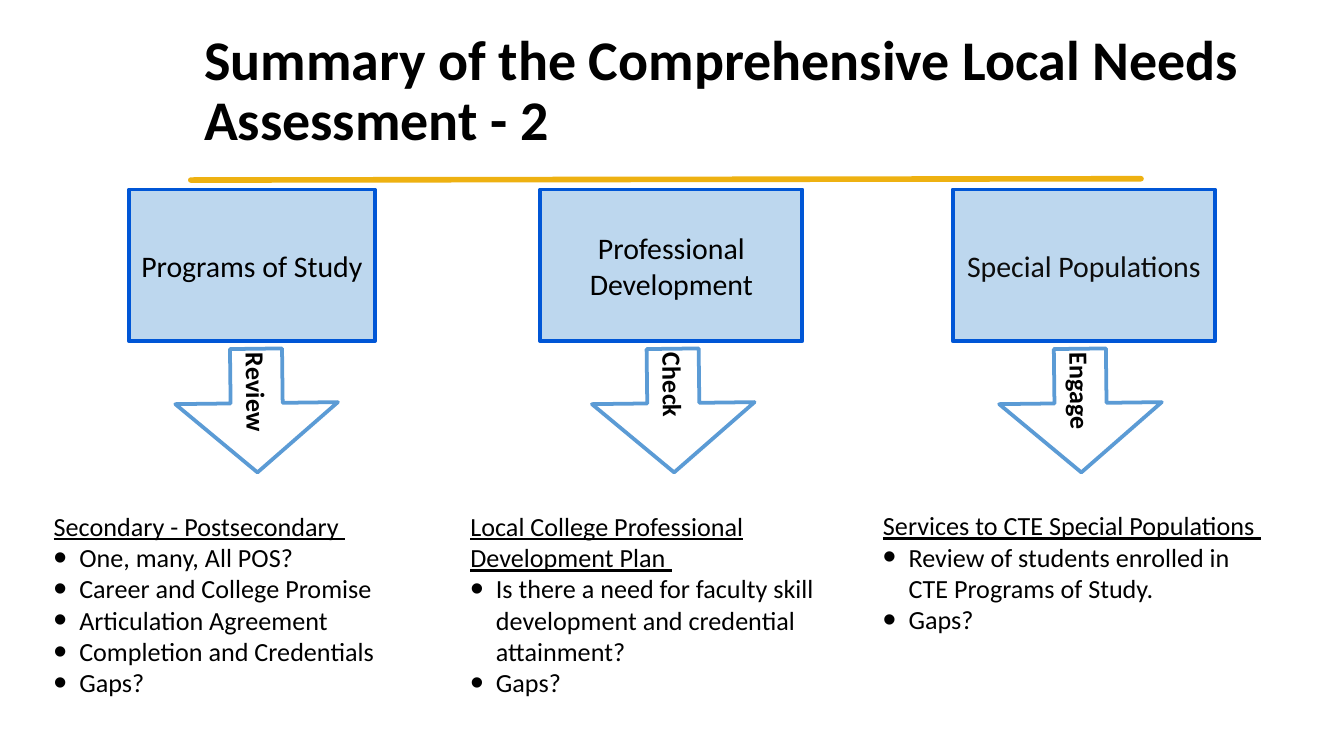
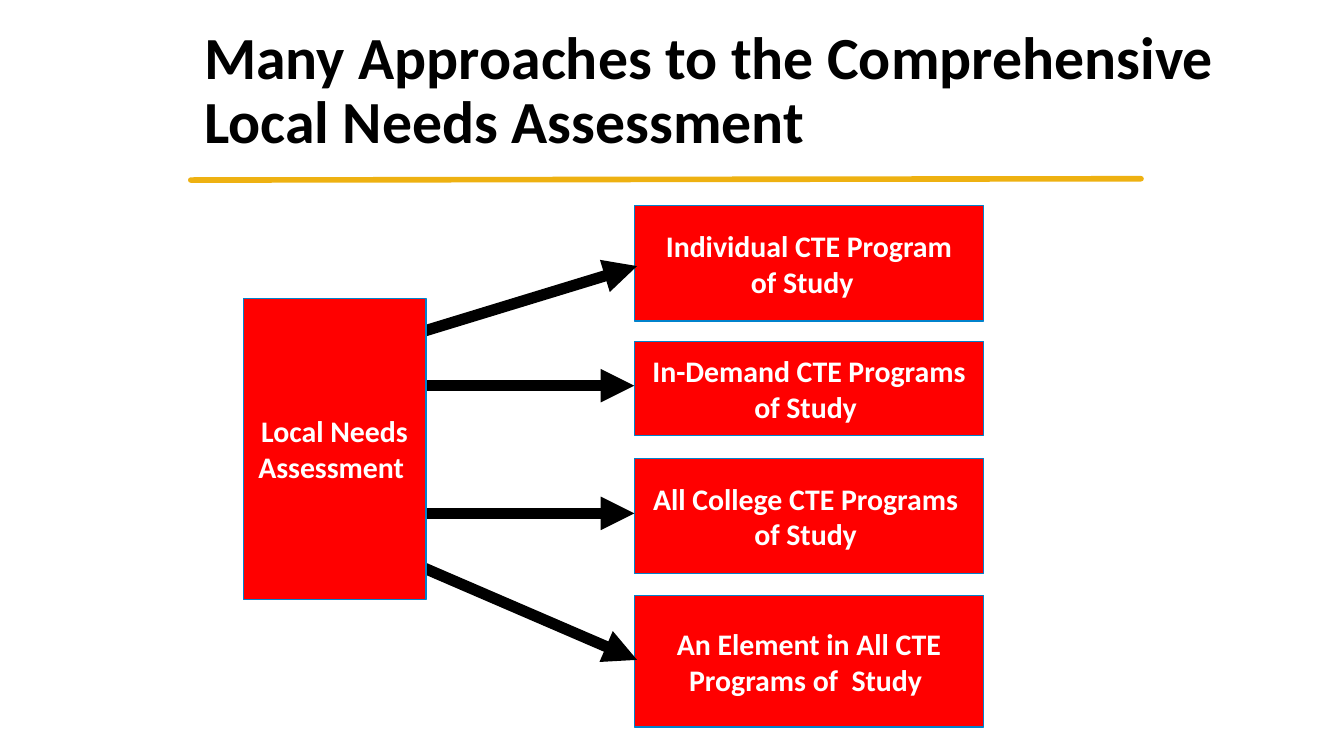
from lxml import etree
from pptx import Presentation
from pptx import util as u
from pptx.dml.color import RGBColor
from pptx.enum import shapes, text
from pptx.oxml.ns import qn

FONT = "Calibri"
BLACK, WHITE, GOLD = "000000", "FFFFFF", "EEB111"
PALE, BLUE, SKY = "BDD7EE", "0056D6", "5B9BD5"
RED, EDGE = "FF0000", "0082CC"
INSET = 0.03
MID = text.PP_ALIGN.CENTER
LEFT = text.PP_ALIGN.LEFT


def tint(hue):
    return RGBColor.from_string(hue)


def place(*nums):
    return [u.Inches(n) for n in nums]


def write(para, words, size, hue=BLACK, bold=False, under=False):
    for i, part in enumerate(words.split("\n")):
        if i:
            para.add_line_break()
        run = para.add_run()
        run.text = part
        font = run.font
        font.name, font.size = FONT, u.Pt(size)
        font.bold, font.underline = bold, under
        font.color.rgb = tint(hue)


def setup(frame, inset=INSET):
    frame.word_wrap = True
    frame.vertical_anchor = text.MSO_ANCHOR.MIDDLE
    if inset is not None:
        frame.margin_left = frame.margin_right = u.Inches(inset)
        frame.margin_top = frame.margin_bottom = u.Inches(inset)


def block(slide, kind, spot, fill, edge, width):
    shape = slide.shapes.add_shape(kind, *place(*spot))
    shape.shadow.inherit = False
    shape.fill.solid()
    shape.fill.fore_color.rgb = tint(fill)
    shape.line.color.rgb = tint(edge)
    shape.line.width = u.Pt(width)
    setup(shape.text_frame)
    return shape


def box(slide, spot, words, fill, edge, width, hue, bold=False):
    shape = block(slide, shapes.MSO_SHAPE.RECTANGLE, spot, fill, edge, width)
    para = shape.text_frame.paragraphs[0]
    para.alignment = MID
    write(para, words, 16, hue, bold)


def redbox(slide, spot, words):
    box(slide, spot, words, RED, EDGE, 0.75, WHITE, True)


def arrow(slide, left, word):
    shape = block(slide, shapes.MSO_SHAPE.RIGHT_ARROW,
                  (left, 2.45, 0.92, 1.21), WHITE, SKY, 2)
    shape.rotation = 89.3
    shape.adjustments[0] = 0.32
    shape.adjustments[1] = 0.56
    para = shape.text_frame.paragraphs[0]
    para.alignment = LEFT
    write(para, word, 14, bold=True)


def line(slide, ends, hue, width, head=False):
    link = slide.shapes.add_connector(shapes.MSO_CONNECTOR.STRAIGHT,
                                      *place(*ends))
    link.line.color.rgb = tint(hue)
    link.line.width = u.Pt(width)
    props = link._element.spPr
    etree.SubElement(props, qn("a:effectLst"))
    stroke = props.find(qn("a:ln"))
    if head:
        etree.SubElement(stroke, qn("a:tailEnd"), type="triangle")
    else:
        stroke.set("cap", "rnd")


def bullet(para):
    props = para._p.get_or_add_pPr()
    props.set("marL", str(u.Inches(0.19)))
    props.set("indent", str(u.Inches(-0.19)))
    etree.SubElement(props, qn("a:buSzPct"), val="145000")
    etree.SubElement(props, qn("a:buFont"), typeface="Arial")
    etree.SubElement(props, qn("a:buChar"), char="•")


def notes(slide, left, high, head, items):
    area = slide.shapes.add_textbox(*place(left, 3.76, 3.06, high))
    frame = area.text_frame
    setup(frame)
    frame.auto_size = text.MSO_AUTO_SIZE.SHAPE_TO_FIT_TEXT
    write(frame.paragraphs[0], head, 14, under=True)
    for item in items:
        para = frame.add_paragraph()
        bullet(para)
        write(para, item, 14)


def start(deck, title, size):
    slide = deck.slides.add_slide(deck.slide_layouts[6])
    line(slide, (1.42, 1.34, 8.49, 1.33), GOLD, 3)
    area = slide.shapes.add_textbox(*place(1.42, 0.14, 8.05, 1.09))
    setup(area.text_frame, None)
    para = area.text_frame.paragraphs[0]
    para.line_spacing = 0.9
    write(para, title, size, bold=True)
    return slide


def summary(deck):
    slide = start(
        deck, "Summary of the Comprehensive Local Needs Assessment - 2", 30)
    topics = [
        (0.96, 1.83, "Programs of Study", BLACK),
        (4.02, 1.95, "Professional Development", BLACK),
        (7.09, 1.95, "Special Populations", "0D0D0D"),
    ]
    for left, wide, words, hue in topics:
        box(slide, (left, 1.41, wide, 1.13), words, PALE, BLUE, 2, hue)
    for left, word in ((1.45, "Review"), (4.55, "Check"), (7.58, "Engage")):
        arrow(slide, left, word)
    notes(slide, 0.37, 1.47, "Secondary - Postsecondary ",
          ["One, many, All POS?", "Career and College Promise",
           "Articulation Agreement", "Completion and Credentials", "Gaps?"])
    notes(slide, 3.47, 1.47, "Local College Professional Development Plan ",
          ["Is there a need for faculty skill development "
           "and credential attainment?", "Gaps?"])
    notes(slide, 6.54, 1, "Services to CTE Special Populations ",
          ["Review of students enrolled in \nCTE Programs of Study.",
           "Gaps?"])


def routes(deck):
    slide = start(
        deck, "Many Approaches to the Comprehensive Local Needs Assessment",
        32)
    goals = [
        (1.53, 0.86, "Individual CTE Program\nof Study  "),
        (2.54, 0.7, "In-Demand CTE Programs of Study "),
        (3.41, 0.86, "All College CTE Programs \nof Study "),
        (4.43, 0.98, "An Element in All CTE Programs of  Study "),
    ]
    for top, high, words in goals:
        redbox(slide, (4.72, top, 2.6, high), words)
    links = [
        (3.07, 2.49, 4.74, 1.98),
        (3.15, 2.87, 4.72, 2.87),
        (3.17, 3.82, 4.72, 3.82),
        (3.07, 4.19, 4.74, 4.91),
    ]
    for ends in links:
        line(slide, ends, BLACK, 6, head=True)
    redbox(slide, (1.81, 2.22, 1.36, 2.24), "Local Needs Assessment ")


def main():
    deck = Presentation()
    deck.slide_width = u.Inches(10)
    deck.slide_height = u.Inches(10 * 9 / 16)
    summary(deck)
    routes(deck)
    deck.save("out.pptx")


if __name__ == "__main__":
    main()
